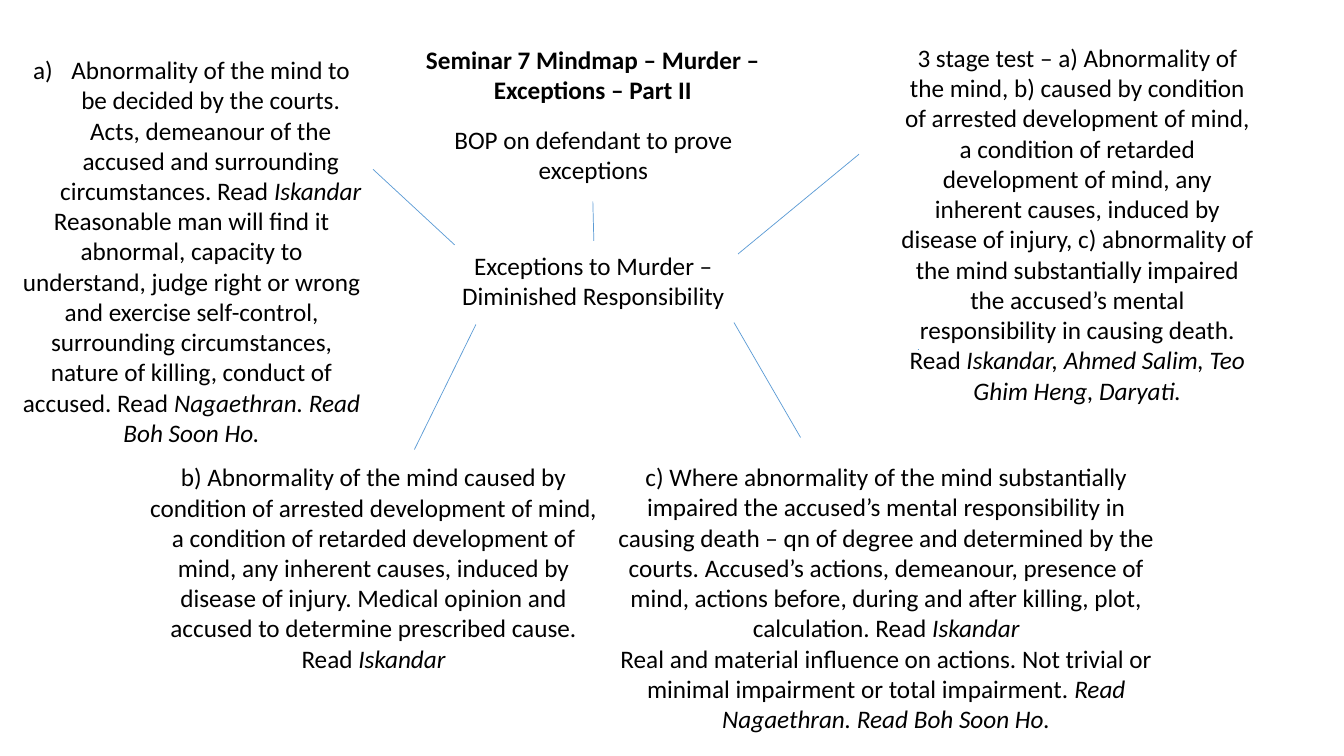
from lxml import etree
from pptx import Presentation
from pptx.dml.color import RGBColor
from pptx.enum import shapes, text
from pptx.oxml.ns import qn
from pptx.util import Inches, Pt

# Each note: (left, top, width, height), then paragraphs of (plain, italic) text
CENTRE_NOTES = [
    ((4.22, 2.43, 3.33, 0.71),
     [("Exceptions to Murder – Diminished Responsibility", "")]),
    ((4.22, 1.18, 3.33, 0.71),
     [("BOP on defendant to prove exceptions", "")]),
]
TITLE = ((4, 0.39, 3.76, 0.71),
         [("Seminar 7 Mindmap – Murder – Exceptions – Part II", "")])
COURTS_NOTE = (
    (0.09, 0.49, 3.62, 4.34),
    [("Abnormality of the mind to be decided by the courts. Acts, demeanour of "
      "the accused and surrounding circumstances. Read ", "Iskandar"),
     ("Reasonable man will find it abnormal, capacity to understand, judge right "
      "or wrong and exercise self-control, surrounding circumstances, nature of "
      "killing, conduct of accused. Read ", "Nagaethran. Read Boh Soon Ho.")])
BRANCH_NOTES = [
    ((8.84, 0.37, 3.69, 3.74),
     [("3 stage test – a) Abnormality of the mind, b) caused by condition of "
       "arrested development of mind, a condition of retarded development of "
       "mind, any inherent causes, induced by disease of injury, c) abnormality "
       "of the mind substantially impaired the accused’s mental responsibility "
       "in causing death. Read ",
       "Iskandar, Ahmed Salim, Teo Ghim Heng, Daryati.")]),
    ((1.35, 4.53, 4.71, 2.22),
     [("b) Abnormality of the mind caused by condition of arrested development "
       "of mind, a condition of retarded development of mind, any inherent "
       "causes, induced by disease of injury. Medical opinion and accused to "
       "determine prescribed cause. Read ", "Iskandar")]),
    ((5.92, 4.53, 5.74, 3.13),
     [("c) Where abnormality of the mind substantially impaired the accused’s "
       "mental responsibility in causing death – qn of degree and determined by "
       "the courts. Accused’s actions, demeanour, presence of mind, actions "
       "before, during and after killing, plot, calculation. Read ", "Iskandar"),
      ("Real and material influence on actions. Not trivial or minimal "
       "impairment or total impairment. ",
       "Read Nagaethran. Read Boh Soon Ho.")]),
]
# Branch lines: start x, start y, end x, end y
BRANCHES = [
    (5.89, 2.39, 5.88, 2),
    (9.1, 3.47, 9.11, 3.47),
    (7.32, 2.52, 8.52, 1.53),
    (4.51, 2.43, 3.7, 1.68),
    (4.72, 3.22, 4.11, 4.46),
    (7.28, 3.2, 7.94, 4.34),
]


def color(value):
    return RGBColor.from_string(value)


def add_note(slide, box, paragraphs, bold=False):
    """Add a centred text box and return its text frame."""
    frame = slide.shapes.add_textbox(*map(Inches, box)).text_frame
    frame.word_wrap = True
    frame.auto_size = text.MSO_AUTO_SIZE.SHAPE_TO_FIT_TEXT
    for index, (plain, italic) in enumerate(paragraphs):
        paragraph = frame.add_paragraph() if index else frame.paragraphs[0]
        paragraph.alignment = text.PP_ALIGN.CENTER
        paragraph.font.name = "Calibri"
        paragraph.font.size = Pt(18)
        paragraph.font.bold = bold
        paragraph.font.color.rgb = color("000000")
        paragraph.add_run().text = plain
        if italic:
            run = paragraph.add_run()
            run.text = italic
            run.font.italic = True
    return frame


def add_letter(paragraph):
    """Number the paragraph a) with a hanging indent."""
    properties = paragraph._p.get_or_add_pPr()
    properties.set("marL", str(Inches(0.38)))
    properties.set("indent", str(Inches(-0.38)))
    numbering = etree.Element(qn("a:buAutoNum"), type="alphaLcParenR")
    properties.insert(0, numbering)


def add_branch(slide, points):
    line = slide.shapes.add_connector(
        shapes.MSO_CONNECTOR.STRAIGHT, *map(Inches, points))
    line.line.color.rgb = color("5B9BD5")
    line.line.width = Pt(0.5)
    etree.SubElement(line._element.spPr, qn("a:effectLst"))


def main():
    presentation = Presentation()
    presentation.slide_width = Inches(13.33)
    presentation.slide_height = Inches(7.5)
    slide = presentation.slides.add_slide(presentation.slide_layouts[6])

    # Title and central topic
    add_note(slide, *TITLE, bold=True)
    for note in CENTRE_NOTES:
        add_note(slide, *note)

    # Surrounding notes
    add_letter(add_note(slide, *COURTS_NOTE).paragraphs[0])
    for note in BRANCH_NOTES:
        add_note(slide, *note)

    # Lines from the topic to the notes
    for points in BRANCHES:
        add_branch(slide, points)

    presentation.save("out.pptx")


if __name__ == "__main__":
    main()
